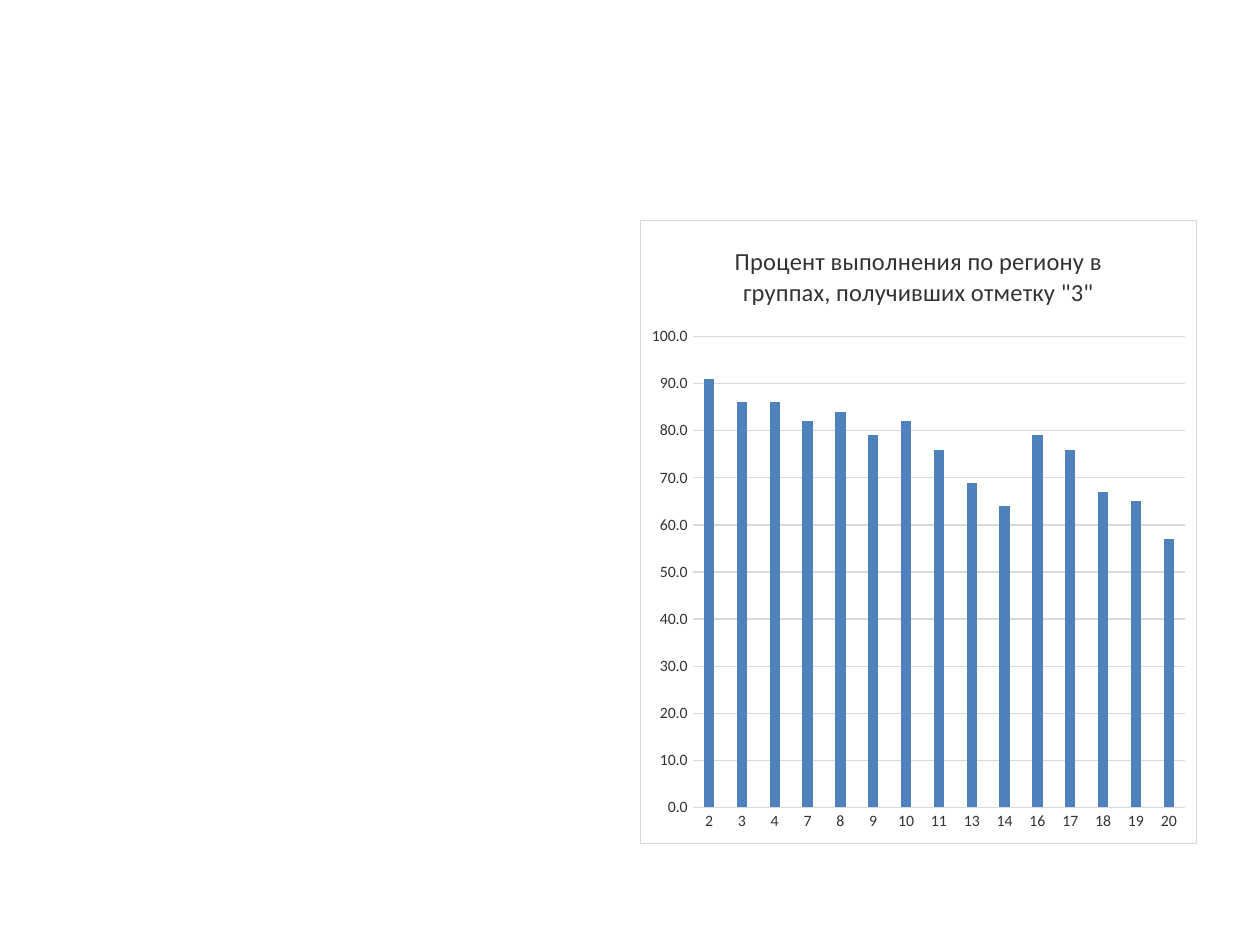
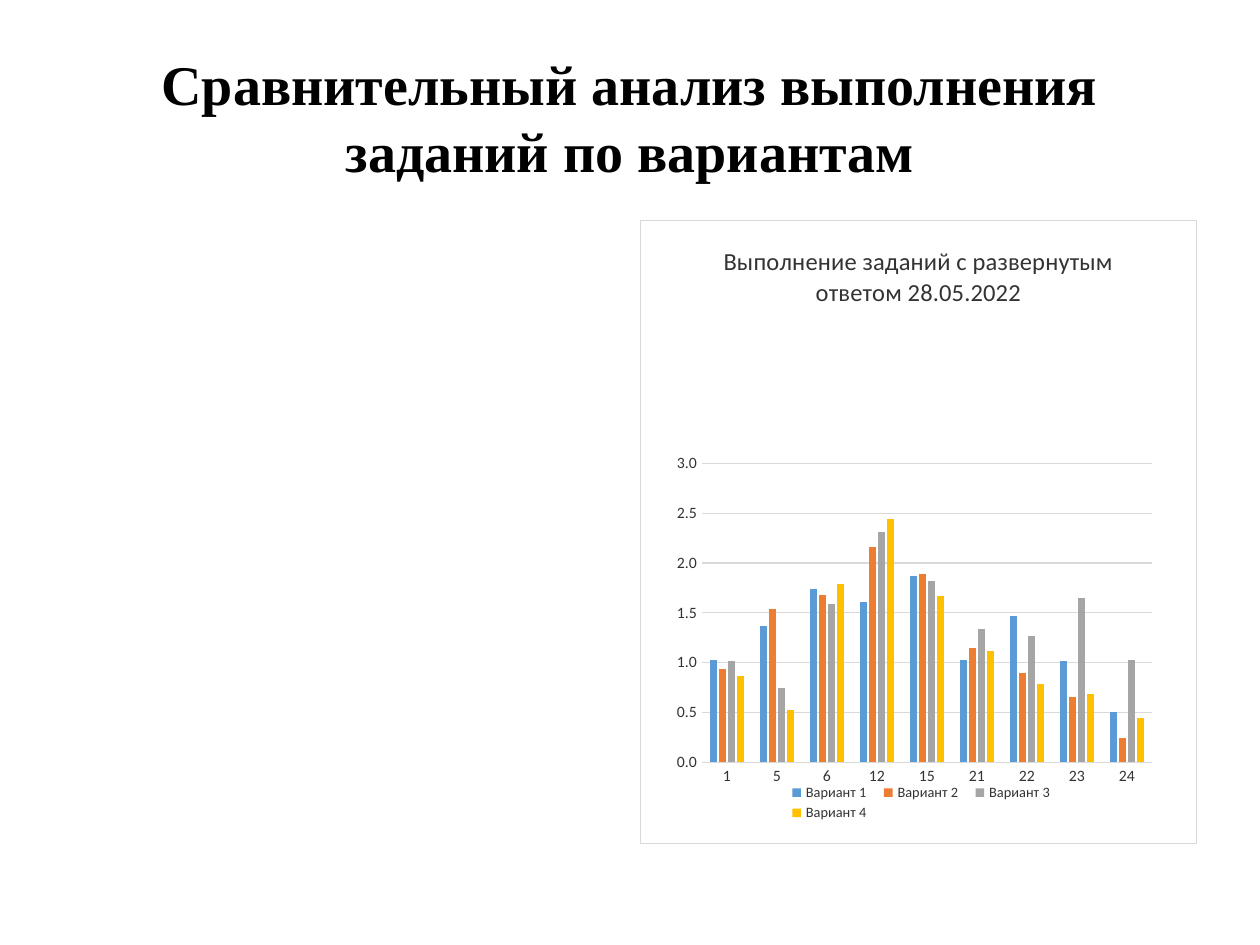
from lxml import etree
from pptx import Presentation
from pptx.chart.data import CategoryChartData
from pptx.dml.color import RGBColor
from pptx.enum.chart import XL_CHART_TYPE, XL_LEGEND_POSITION, XL_TICK_MARK
from pptx.enum.text import MSO_ANCHOR, PP_ALIGN
from pptx.oxml import parse_xml
from pptx.oxml.ns import nsdecls, qn
from pptx.util import Inches, Pt

COLUMNS = XL_CHART_TYPE.COLUMN_CLUSTERED
RIGHT = XL_LEGEND_POSITION.RIGHT
NO_TICK = XL_TICK_MARK.NONE
MIDDLE = MSO_ANCHOR.MIDDLE
CENTER = PP_ALIGN.CENTER

WIDE, HIGH = Inches(10), Inches(7.5)
BLACK, GREY, RULE, WHITE = "000000", "333333", "D9D9D9", "FFFFFF"
HEAD_BOX = (0.05, 0.04, 0.9, 0.167)
CHART_BOX = (0.508, 0.233, 0.442, 0.66)
HEAD_FONT = {"name": "Times New Roman", "size": Pt(32), "bold": True}
BASE_FONT = {"name": "Calibri", "size": Pt(10)}
NAME_FONT = {"name": "Calibri", "size": Pt(14), "bold": False}
AXIS_FONT = {"name": "Calibri", "size": Pt(9)}
KEY_FONT = {"name": "Calibri", "size": Pt(8.2)}

MARKS = {
    "name": "Процент выполнения по региону в группах, получивших отметку \"3\"",
    "tasks": (2, 3, 4, 7, 8, 9, 10, 11, 13, 14, 16, 17, 18, 19, 20),
    "series": [("Series 1", "4F81BD",
                (91, 86, 86, 82, 84, 79, 82, 76, 69, 64, 79, 76, 67, 65, 57))],
    "top": 100,
    "step": 10,
}
FORMS = {
    "name": "Выполнение заданий с развернутым ответом 28.05.2022",
    "tasks": (1, 5, 6, 12, 15, 21, 22, 23, 24),
    "series": [
        ("Вариант 1", "5B9BD5", (1.03, 1.37, 1.74, 1.61, 1.87, 1.03, 1.47, 1.02, 0.5)),
        ("Вариант 2", "ED7D31", (0.94, 1.54, 1.68, 2.16, 1.89, 1.15, 0.9, 0.65, 0.24)),
        ("Вариант 3", "A5A5A5", (1.02, 0.75, 1.59, 2.31, 1.82, 1.34, 1.27, 1.65, 1.03)),
        ("Вариант 4", "FFC000", (0.87, 0.52, 1.79, 2.44, 1.67, 1.12, 0.79, 0.68, 0.44)),
    ],
    "top": 3,
    "step": 0.5,
    "plot": (0.11, 0.39, 0.81, 0.48),
    "key": (0.25, 0.9, 0.51, 0.07),
}


def paint(color, code):
    """Give a font, fill or line colour its hex value."""
    color.rgb = RGBColor.from_string(code)


def apply(part, values):
    """Set each attribute named in a dict."""
    for name, value in values.items():
        setattr(part, name, value)


def dress(font, look, code=GREY):
    """Set a font's look and colour."""
    apply(font, look)
    paint(font.color, code)


def rule(line):
    """Draw a thin light line."""
    line.width = Pt(0.75)
    paint(line.color, RULE)


def scale(box):
    """Turn shares of the slide into lengths."""
    return [round(part * side) for part, side in zip(box, (WIDE, HIGH) * 2)]


def place(node, index, box, inner=False):
    """Fix a chart part at a box given in shares of the chart."""
    for old in node.findall(qn("c:layout")):
        node.remove(old)
    layout = parse_xml(f"<c:layout {nsdecls('c')}><c:manualLayout/></c:layout>")
    values = [("layoutTarget", "inner")] if inner else []
    values += [("xMode", "edge"), ("yMode", "edge"), *zip("xywh", box)]
    for tag, value in values:
        etree.SubElement(layout[0], qn(f"c:{tag}")).set("val", str(value))
    node.insert(index, layout)


def frame(chart):
    """Give the chart area a white fill and a thin border."""
    chart.element.find(qn("c:chart")).addnext(parse_xml(
        f"<c:spPr {nsdecls('c', 'a')}>"
        f"<a:solidFill><a:srgbClr val='{WHITE}'/></a:solidFill>"
        f"<a:ln w='{Pt(0.75)}'><a:solidFill><a:srgbClr val='{RULE}'/></a:solidFill></a:ln>"
        "</c:spPr>"))


def add_axes(chart, top, step):
    """Style both axes and the grid lines."""
    tasks, score = chart.category_axis, chart.value_axis
    for axis in (tasks, score):
        apply(axis, {"major_tick_mark": NO_TICK, "minor_tick_mark": NO_TICK})
        dress(axis.tick_labels.font, AXIS_FONT)
    apply(score, {"minimum_scale": 0, "maximum_scale": top, "major_unit": step})
    apply(score.tick_labels, {"number_format": "0.0", "number_format_is_linked": False})
    rule(tasks.format.line)
    score.format.line.fill.background()
    rule(score.major_gridlines.format.line)


def add_key(chart, box):
    """Place the legend in a box given in shares of the chart."""
    chart.has_legend = True
    apply(chart.legend, {"position": RIGHT, "include_in_layout": False})
    dress(chart.legend.font, KEY_FONT)
    place(chart.element.find(f".//{qn('c:legend')}"), 1, box)


def add_bars(slide, box, facts):
    """Place a column chart of results by task."""
    data = CategoryChartData(number_format="General")
    data.categories = [str(task) for task in facts["tasks"]]
    for name, _, values in facts["series"]:
        data.add_series(name, values)
    chart = slide.shapes.add_chart(COLUMNS, *scale(box), data).chart
    dress(chart.font, BASE_FONT, BLACK)
    frame(chart)
    chart.has_title = True
    text = chart.chart_title.text_frame
    text.text = facts["name"]
    dress(text.paragraphs[0].runs[0].font, NAME_FONT)
    plot = chart.plots[0]
    apply(plot, {"gap_width": 219, "overlap": -27, "vary_by_categories": False})
    for series, (_, code, _) in zip(plot.series, facts["series"]):
        series.format.fill.solid()
        paint(series.format.fill.fore_color, code)
    add_axes(chart, facts["top"], facts["step"])
    chart.has_legend = False
    if "key" in facts:
        add_key(chart, facts["key"])
    if "plot" in facts:
        place(chart.element.find(f".//{qn('c:plotArea')}"), 0, facts["plot"], True)


def add_head(slide, box, words):
    """Place the slide title."""
    text = slide.shapes.add_textbox(*scale(box)).text_frame
    apply(text, {"word_wrap": True, "vertical_anchor": MIDDLE, "text": words})
    line = text.paragraphs[0]
    line.alignment = CENTER
    dress(line.runs[0].font, HEAD_FONT, BLACK)


def main():
    """Build and save both slides."""
    deck = Presentation()
    apply(deck, {"slide_width": WIDE, "slide_height": HIGH})
    for head, facts in (
        (None, MARKS),
        ("Сравнительный анализ выполнения заданий по вариантам", FORMS),
    ):
        slide = deck.slides.add_slide(deck.slide_layouts[6])
        if head:
            add_head(slide, HEAD_BOX, head)
        add_bars(slide, CHART_BOX, facts)
    deck.save("out.pptx")


if __name__ == "__main__":
    main()
